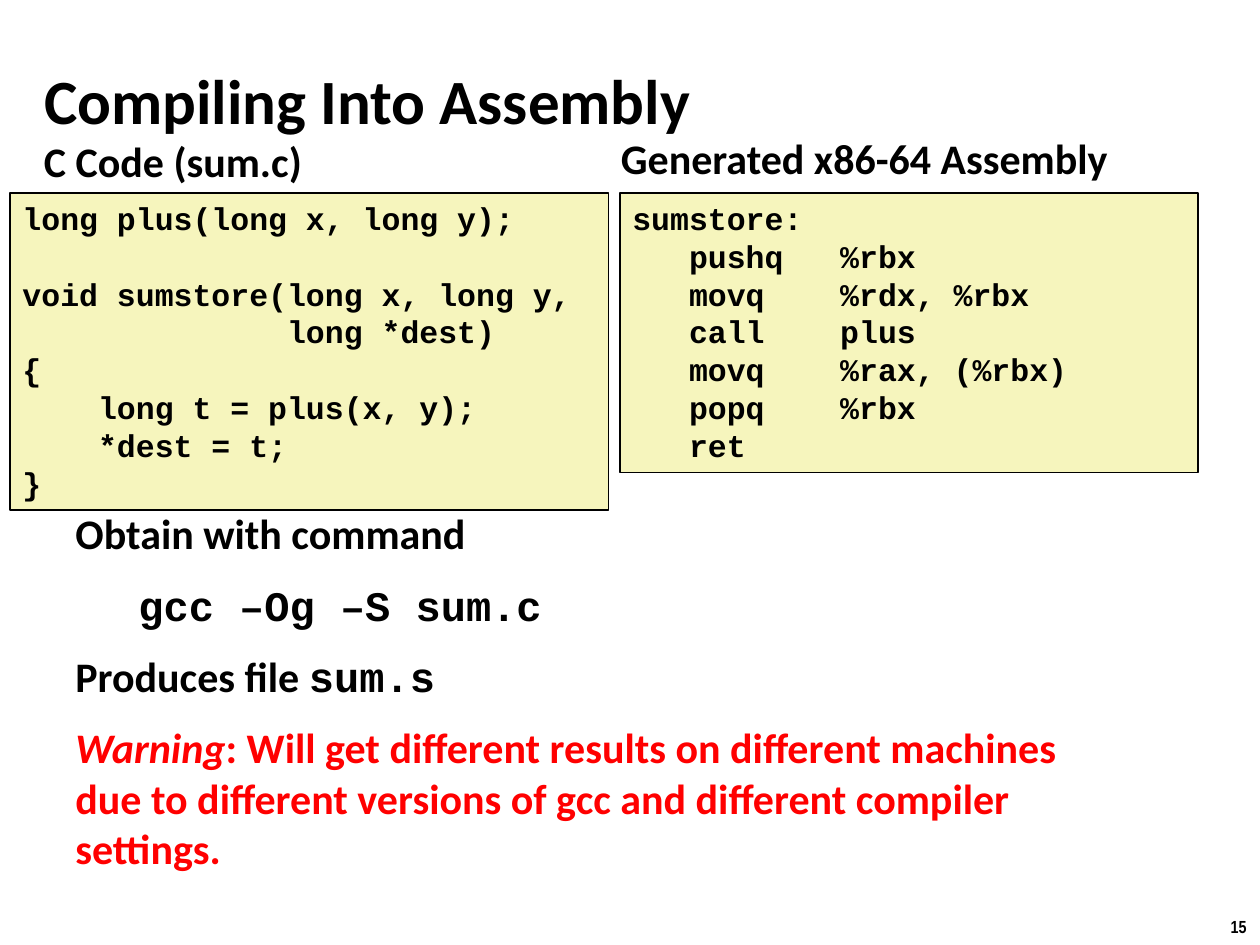
from dataclasses import dataclass

from lxml import etree
from pptx import Presentation
from pptx.dml.color import RGBColor
from pptx.enum.shapes import MSO_SHAPE
from pptx.enum.text import MSO_ANCHOR, MSO_AUTO_SIZE, PP_ALIGN
from pptx.oxml.ns import qn
from pptx.util import Emu, Pt

RECTANGLE = MSO_SHAPE.RECTANGLE
TOP, MIDDLE = MSO_ANCHOR.TOP, MSO_ANCHOR.MIDDLE
LEFT, CENTER = PP_ALIGN.LEFT, PP_ALIGN.CENTER
NO_AUTOFIT = MSO_AUTO_SIZE.NONE
EMU_PER_PX = 9144  # 100 px to the inch
TITLE_ONLY = 5


@dataclass(frozen=True)
class Theme:
    ink: RGBColor = RGBColor(0, 0, 0)
    warning: RGBColor = RGBColor(0xFF, 0, 0)
    code_fill: RGBColor = RGBColor(0xF6, 0xF5, 0xBD)
    body_font: str = "Calibri"
    code_font: str = "Courier New"
    number_font: str = "Arial Narrow"
    title_size: int = 36
    body_size: int = 24
    code_size: int = 18
    number_size: int = 10
    note_gap: int = 12


THEME = Theme()

C_CODE = """\
long plus(long x, long y);

void sumstore(long x, long y,
              long *dest)
{
    long t = plus(x, y);
    *dest = t;
}"""

ASSEMBLY = """\
sumstore:
   pushq   %rbx
   movq    %rdx, %rbx
   call    plus
   movq    %rax, (%rbx)
   popq    %rbx
   ret"""


def px(length):
    return Emu(length * EMU_PER_PX)


def add_run(paragraph, text, size=THEME.body_size, face=THEME.body_font,
            color=THEME.ink, italic=False):
    run = paragraph.add_run()
    run.text = text
    font = run.font
    font.size, font.name = Pt(size), face
    font.bold, font.italic = True, italic
    font.color.rgb = color


def set_frame(shape, anchor=TOP, wrap=True):
    frame = shape.text_frame
    frame.word_wrap = wrap
    frame.auto_size = NO_AUTOFIT
    frame.vertical_anchor = anchor
    frame.margin_left = frame.margin_right = px(10)
    frame.margin_top = frame.margin_bottom = px(5)
    return frame


def add_text_area(slide, box, wrap=True):
    return set_frame(slide.shapes.add_textbox(*map(px, box)), wrap=wrap)


def add_title(slide, box, text):
    title = slide.shapes.title
    title.left, title.top, title.width, title.height = map(px, box)
    paragraph = set_frame(title, MIDDLE).paragraphs[0]
    paragraph.alignment = LEFT
    add_run(paragraph, text, THEME.title_size)


def size_empty_line(paragraph):
    """Give a blank line of code the height of the other lines."""
    end = etree.SubElement(paragraph._p, qn("a:endParaRPr"),
                           sz=str(THEME.code_size * 100), b="1")
    etree.SubElement(end, qn("a:latin"), typeface=THEME.code_font)


def add_code_panel(slide, box, code):
    panel = slide.shapes.add_shape(RECTANGLE, *map(px, box))
    panel.shadow.inherit = False
    panel.fill.solid()
    panel.fill.fore_color.rgb = THEME.code_fill
    panel.line.color.rgb = THEME.ink
    panel.line.width = Pt(1)
    frame = set_frame(panel)
    for index, line in enumerate(code.split("\n")):
        paragraph = frame.add_paragraph() if index else frame.paragraphs[0]
        paragraph.alignment = LEFT
        if line:
            add_run(paragraph, line, THEME.code_size, THEME.code_font)
        else:
            size_empty_line(paragraph)


def add_listing(slide, heading_box, heading, code_box, code):
    """Place a heading and the code panel under it."""
    add_run(add_text_area(slide, heading_box).paragraphs[0], heading)
    add_code_panel(slide, code_box, code)


def add_compile_notes(slide, box):
    frame = add_text_area(slide, box)
    obtain = frame.paragraphs[0]
    command, product, warning = (frame.add_paragraph() for _ in range(3))
    for paragraph in (command, product, warning):
        paragraph.space_before = Pt(THEME.note_gap)
    command._p.get_or_add_pPr().set("marL", str(px(50)))

    add_run(obtain, "Obtain with command")
    add_run(command, "gcc –Og –S sum.c", face=THEME.code_font)
    add_run(product, "Produces file ")
    add_run(product, "sum.s", face=THEME.code_font)
    add_run(warning, "Warning", color=THEME.warning, italic=True)
    add_run(warning, ": Will get different results on different machines due to "
            "different versions of gcc and different compiler settings.",
            color=THEME.warning)


def add_page_number(slide, box, number):
    paragraph = add_text_area(slide, box, wrap=False).paragraphs[0]
    paragraph.alignment = CENTER
    add_run(paragraph, number, THEME.number_size, THEME.number_font)


def main():
    deck = Presentation()
    deck.slide_width, deck.slide_height = px(1000), px(750)
    slide = deck.slides.add_slide(deck.slide_layouts[TITLE_ONLY])
    add_page_number(slide, (966, 722, 34, 27), "15")
    add_title(slide, (25, 48, 749, 61), "Compiling Into Assembly")
    add_listing(slide, (25, 103, 267, 40), "C Code (sum.c)",
                (8, 153, 475, 252), C_CODE)
    add_listing(slide, (483, 100, 450, 45), "Generated x86-64 Assembly",
                (492, 153, 459, 222), ASSEMBLY)
    add_compile_notes(slide, (50, 398, 817, 373))
    deck.save("out.pptx")


if __name__ == "__main__":
    main()
